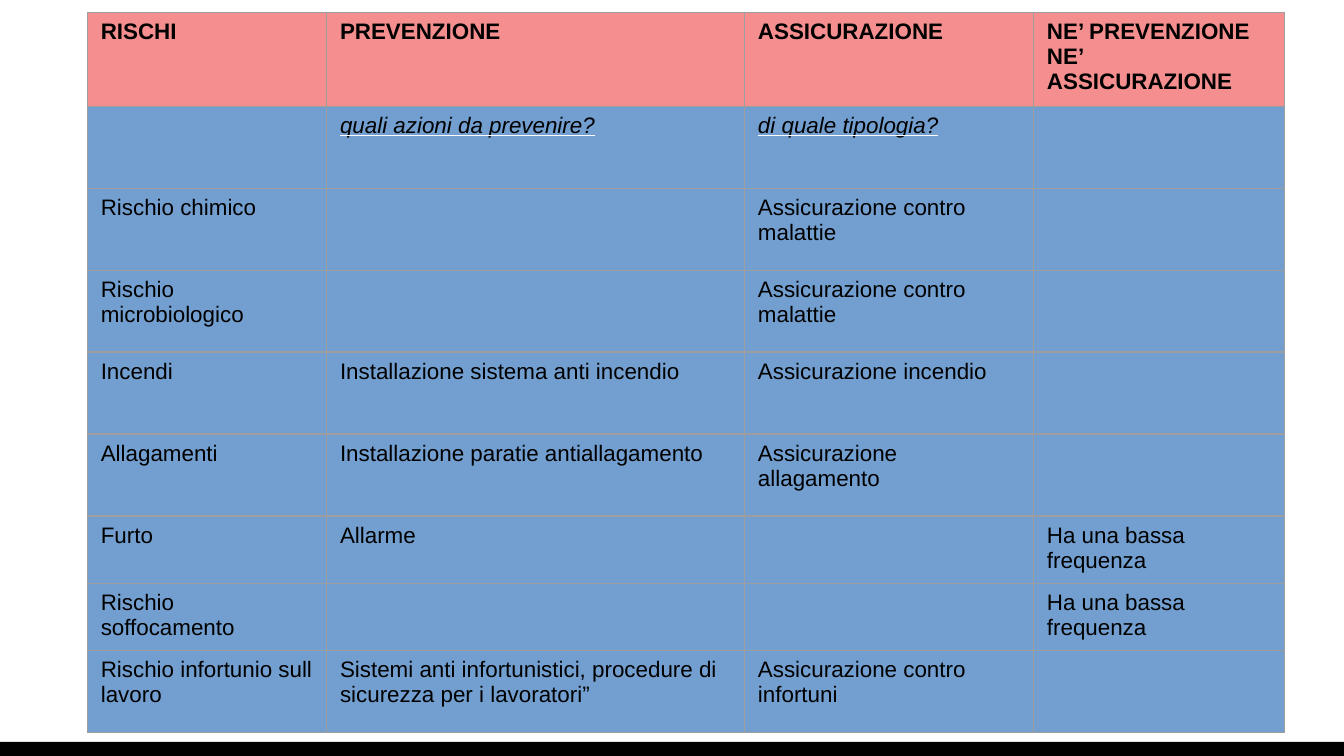
from lxml import etree
from pptx import Presentation
from pptx.dml.color import RGBColor
from pptx.enum.shapes import MSO_SHAPE
from pptx.oxml.ns import qn
from pptx.util import Inches, Pt

RECTANGLE = MSO_SHAPE.RECTANGLE
BLANK_LAYOUT = 6

FONT = "Arial"
BLACK, WHITE = "000000", "FFFFFF"
HEADER_FILL, BODY_FILL, BORDER = "F58F8F", "729FCF", "9E9E9E"

SLIDE_WIDTH = 10
SLIDE_HEIGHT = SLIDE_WIDTH * 9 / 16
COLUMN_WIDTHS = [1.78, 3.11, 2.15, 1.87]
ROW_HEIGHTS = [0.7] + [0.61] * 5 + [0.5] * 2 + [0.61]
ILLNESS_COVER = "Assicurazione contro malattie"
LOW_FREQUENCY = "Ha una bassa frequenza"
RISK_ROWS = [
    ["RISCHI", "PREVENZIONE", "ASSICURAZIONE", "NE’ PREVENZIONE NE’ ASSICURAZIONE"],
    ["", "quali azioni da prevenire?", "di quale tipologia?", ""],
    ["Rischio chimico", "", ILLNESS_COVER, ""],
    ["Rischio microbiologico", "", ILLNESS_COVER, ""],
    ["Incendi", "Installazione sistema anti incendio", "Assicurazione incendio", ""],
    ["Allagamenti", "Installazione paratie antiallagamento", "Assicurazione allagamento", ""],
    ["Furto", "Allarme", "", LOW_FREQUENCY],
    ["Rischio soffocamento", "", "", LOW_FREQUENCY],
    ["Rischio infortunio sull lavoro",
     "Sistemi anti infortunistici, procedure di sicurezza per i lavoratori”",
     "Assicurazione contro infortuni", ""],
]


def color(hex_value):
    return RGBColor.from_string(hex_value)


def add_solid_fill(parent, hex_value):
    fill = etree.SubElement(parent, qn("a:solidFill"))
    etree.SubElement(fill, qn("a:srgbClr"), val=hex_value)


def set_borders(cell, hex_value, width):
    properties = cell._tc.get_or_add_tcPr()
    for index, side in enumerate(("a:lnL", "a:lnR", "a:lnT", "a:lnB")):
        line = etree.Element(qn(side), w=str(Pt(width)))
        add_solid_fill(line, hex_value)
        properties.insert(index, line)


def underline(run, hex_value):
    """Underline the run in a colour of its own."""
    run.font.underline = True
    underline_fill = etree.SubElement(run.font._element, qn("a:uFill"))
    add_solid_fill(underline_fill, hex_value)


def write_cell(cell, text, is_header, is_question):
    cell.fill.solid()
    cell.fill.fore_color.rgb = color(HEADER_FILL if is_header else BODY_FILL)
    set_borders(cell, BORDER, 0.75)
    if not text:
        return
    run = cell.text_frame.paragraphs[0].add_run()
    run.text = text
    run.font.size = Pt(12)
    run.font.bold = is_header
    run.font.italic = is_question
    run.font.color.rgb = color(BLACK)
    if is_question:
        underline(run, WHITE)
    run.font.name = FONT


def add_risk_table(slide, left, top):
    shape = slide.shapes.add_table(
        len(ROW_HEIGHTS), len(COLUMN_WIDTHS), Inches(left), Inches(top),
        Inches(sum(COLUMN_WIDTHS)), Inches(sum(ROW_HEIGHTS)))
    table = shape.table
    table.horz_banding = False
    for column, width in zip(table.columns, COLUMN_WIDTHS):
        column.width = Inches(width)
    for row_index, (row, height) in enumerate(zip(table.rows, ROW_HEIGHTS)):
        row.height = Inches(height)
        for cell, text in zip(row.cells, RISK_ROWS[row_index]):
            write_cell(cell, text, row_index == 0, row_index == 1)


def add_footer_bar(slide, left, top, width, height):
    bar = slide.shapes.add_shape(
        RECTANGLE, Inches(left), Inches(top), Inches(width), Inches(height))
    bar.shadow.inherit = False
    bar.fill.solid()
    bar.fill.fore_color.rgb = color(BLACK)
    bar.line.fill.background()


def main():
    presentation = Presentation()
    presentation.slide_width = Inches(SLIDE_WIDTH)
    presentation.slide_height = Inches(SLIDE_HEIGHT)
    slide = presentation.slides.add_slide(presentation.slide_layouts[BLANK_LAYOUT])
    bar_top = 5.52
    add_footer_bar(slide, 0, bar_top, SLIDE_WIDTH, SLIDE_HEIGHT - bar_top)
    add_risk_table(slide, 0.65, 0.09)
    presentation.save("out.pptx")


if __name__ == "__main__":
    main()
